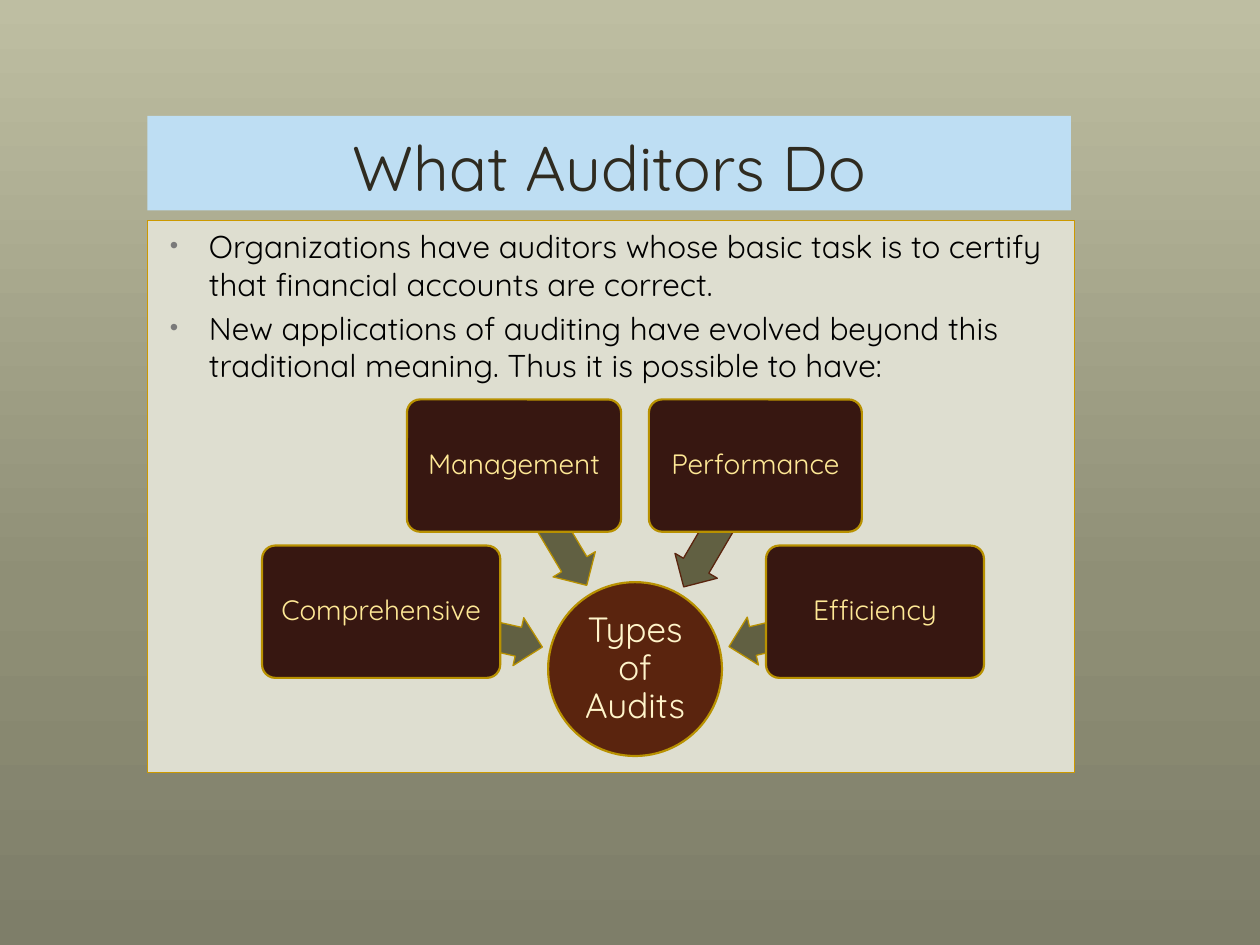
from lxml import etree
from pptx import Presentation
from pptx.dml.color import RGBColor
from pptx.enum import shapes, text
from pptx.oxml.ns import qn
from pptx.util import Inches, Pt

FONT = "Quicksand"
COLORS = {
    "title_fill": "BEDEF3", "title_text": "2F2B20",
    "panel": "DEDED0", "panel_line": "CC9900", "body_text": "000000", "bullet": "7A7A7A",
    "hub": "5A240E", "hub_text": "FFF4CA",
    "card": "371711", "card_text": "FFE996", "gold": "B89101", "arrow": "616042",
}
BACKGROUND = [(0, "BEBEA2"), (62, "8F8F76"), (100, "7E7E69")]

TITLE = "What Auditors Do"
POINTS = [
    "Organizations have auditors whose basic task is to certify that financial accounts are correct.",
    "New applications of auditing have evolved beyond this traditional meaning. "
    "Thus it is possible to have:",
]
HUB = "Types of Audits"
LOWER, UPPER = 4.33, 3.17
CARD_HEIGHT, ARROW_HEIGHT = 1.05, 0.39
# label, card left, card top, card width, arrow (left, top, width, rotation), arrow line
AUDITS = [
    ("Comprehensive", 2.08, LOWER, 1.89, (3.03, 4.8, 1.29, 192.6), "gold"),
    ("Management", 3.23, UPPER, 1.7, (3.81, 3.97, 1.12, 239.2), "gold"),
    ("Performance", 5.15, UPPER, 1.69, (5.15, 3.98, 1.12, 300.4), "hub"),
    ("Efficiency", 6.08, LOWER, 1.73, (5.77, 4.8, 1.2, 346.8), "gold"),
]


def rgb(name):
    return RGBColor.from_string(COLORS[name])


def add_box(slide, kind, place, fill, line, line_width):
    box = slide.shapes.add_shape(kind, *map(Inches, place))
    box.shadow.inherit = False
    box.fill.solid()
    box.fill.fore_color.rgb = rgb(fill)
    box.line.color.rgb = rgb(line)
    box.line.width = Pt(line_width)
    return box


def style(paragraph, size, color, align):
    paragraph.font.name = FONT
    paragraph.font.size = Pt(size)
    paragraph.font.color.rgb = rgb(color)
    paragraph.alignment = align


def label(box, words, size, color, margin):
    frame = box.text_frame
    frame.word_wrap = True
    frame.vertical_anchor = text.MSO_ANCHOR.MIDDLE
    frame.margin_left = frame.margin_right = Inches(margin)
    frame.margin_top = frame.margin_bottom = Inches(margin)
    frame.text = words
    paragraph = frame.paragraphs[0]
    style(paragraph, size, color, text.PP_ALIGN.CENTER)
    paragraph.line_spacing = 0.9


def add_bullet(paragraph):
    properties = paragraph._p.get_or_add_pPr()
    properties.set("marL", str(Inches(0.39)))
    properties.set("indent", str(Inches(-0.31)))
    bullet_color = etree.SubElement(properties, qn("a:buClr"))
    etree.SubElement(bullet_color, qn("a:srgbClr"), val=COLORS["bullet"])
    etree.SubElement(properties, qn("a:buSzPct"), val="76000")
    etree.SubElement(properties, qn("a:buFont"), typeface="Arial")
    etree.SubElement(properties, qn("a:buChar"), char="•")


def paint_background(slide):
    fill = slide.background.fill
    fill.gradient()
    fill.gradient_angle = 270
    stops = slide.element.find(".//" + qn("a:gsLst"))
    for stop in list(stops):
        stops.remove(stop)
    for percent, color in BACKGROUND:
        stop = etree.SubElement(stops, qn("a:gs"), pos=str(percent * 1000))
        etree.SubElement(stop, qn("a:srgbClr"), val=color)


def add_title(slide):
    title = slide.shapes.title
    title.left, title.top, title.width, title.height = map(Inches, (1.17, 0.92, 7.33, 0.75))
    title.fill.solid()
    title.fill.fore_color.rgb = rgb("title_fill")
    title.text_frame.text = TITLE
    title.text_frame.vertical_anchor = text.MSO_ANCHOR.BOTTOM
    style(title.text_frame.paragraphs[0], 36, "title_text", text.PP_ALIGN.CENTER)


def add_points(slide):
    panel = add_box(slide, shapes.MSO_SHAPE.RECTANGLE, (1.17, 1.75, 7.36, 4.38),
                    "panel", "panel_line", 0.75)
    frame = panel.text_frame
    frame.word_wrap = True
    frame.vertical_anchor = text.MSO_ANCHOR.TOP
    frame.text = "\n".join(POINTS)
    for paragraph in frame.paragraphs:
        style(paragraph, 18, "body_text", text.PP_ALIGN.LEFT)
        paragraph.space_before = Pt(3.6)
        add_bullet(paragraph)


def add_audits(slide):
    hub = add_box(slide, shapes.MSO_SHAPE.OVAL, (4.35, 4.62, 1.38, 1.38), "hub", "gold", 1.25)
    label(hub, HUB, 20, "hub_text", 0.01)
    for name, left, top, width, (arrow_left, arrow_top, length, turn), arrow_line in AUDITS:
        arrow = add_box(slide, shapes.MSO_SHAPE.LEFT_ARROW,
                        (arrow_left, arrow_top, length, ARROW_HEIGHT), "arrow", arrow_line, 0.75)
        arrow.adjustments[0] = 0.6
        arrow.rotation = turn
        card = add_box(slide, shapes.MSO_SHAPE.ROUNDED_RECTANGLE,
                       (left, top, width, CARD_HEIGHT), "card", "gold", 1.25)
        card.adjustments[0] = 0.1
        label(card, name, 16, "card_text", 0.03)


def main():
    deck = Presentation()
    deck.slide_width, deck.slide_height = Inches(10), Inches(7.5)
    slide = deck.slides.add_slide(deck.slide_layouts[5])
    paint_background(slide)
    add_title(slide)
    add_points(slide)
    add_audits(slide)
    deck.save("out.pptx")


if __name__ == "__main__":
    main()
